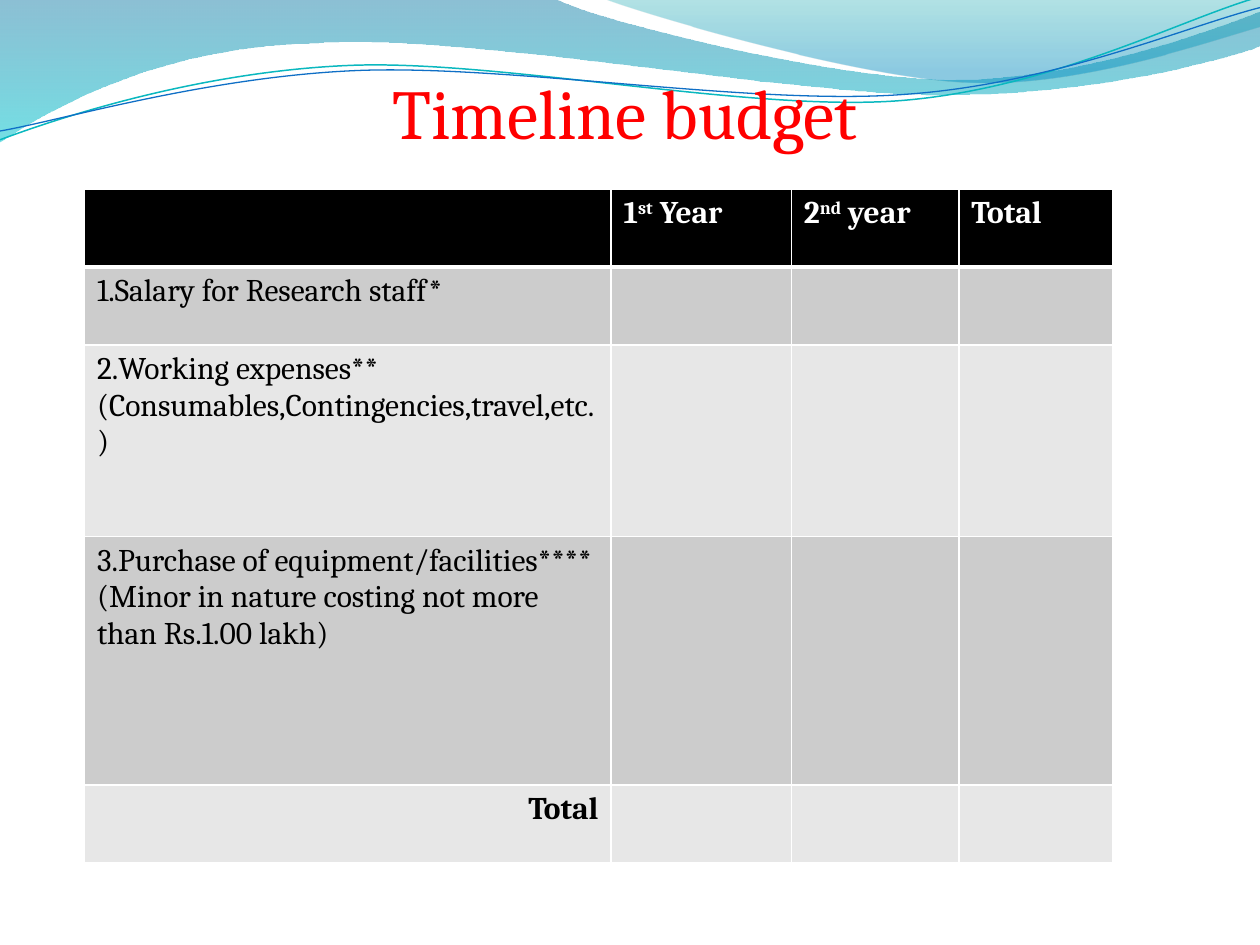
from math import cos, radians, sin

from lxml import etree
from pptx import Presentation
from pptx.dml.color import RGBColor
from pptx.enum.text import MSO_ANCHOR, MSO_AUTO_SIZE, PP_ALIGN
from pptx.oxml import parse_xml
from pptx.oxml.ns import nsdecls, qn
from pptx.util import Inches, Pt

TOP, CENTER, RIGHT = MSO_ANCHOR.TOP, PP_ALIGN.CENTER, PP_ALIGN.RIGHT
FIXED = MSO_AUTO_SIZE.NONE
FONT = "Cambria"
RED = RGBColor(0xFF, 0, 0)
BLACK = RGBColor(0, 0, 0)
WHITE = RGBColor(0xFF, 0xFF, 0xFF)
DARK = RGBColor(0xCC, 0xCC, 0xCC)
PALE = RGBColor(0xE7, 0xE7, 0xE7)
TEAL = RGBColor(0x0A, 0xB8, 0xBF)
BLUE = RGBColor(0x0F, 0x6F, 0xC6)
DEEP = RGBColor(0, 0x74, 0xA1)
AQUA = RGBColor(0, 0xC6, 0xCF)
SEA = RGBColor(0, 0xA1, 0xA9)
SKY = RGBColor(0, 0x8B, 0xBF)

TILT = 357.3
COLS = [4.18, 1.43, 1.33, 1.22]
ROWS = [0.62, 0.62, 1.52, 1.97, 0.62]
HEADS = [[], [("1", "st", " Year")], [("2", "nd", " year")], [("Total",)]]
ITEMS = [
    ["1.Salary for Research staff*"],
    ["2.Working expenses** (Consumables,Contingencies,travel,etc.)"],
    ["3.Purchase of equipment/facilities****",
     "(Minor in nature costing not more than Rs.1.00 lakh)"],
    ["Total"],
]
WAVES = [
    ((-0.01, -0.01, 10.02, 1.14),
     [(0, 0), (4.4, -0.01), (4.76, 0.17, 6.64, 0.63, 7.58, 0.63),
      (8.53, 0.63, 9.58, 0.26, 10, 0.09), (10.01, 0.36),
      (9.83, 0.44, 8.7, 0.76, 7.46, 0.75),
      (6.22, 0.75, 3.82, 0.28, 2.57, 0.34),
      (1.29, 0.36, 0.46, 0.83, -0.01, 1.13), (0, 0)],
     [(0, DEEP, 45), (100, AQUA, 55)]),
    ((4.79, -0.01, 5.21, 0.7),
     [(4.79, -0.01), (5.09, 0.11, 6.82, 0.62, 7.69, 0.65),
      (8.56, 0.69, 9.61, 0.32, 10, 0.21), (10, 0), (4.79, -0.01)],
     [(0, SEA, 30), (80, SKY, 45)]),
]
LINES = [
    ((-0.02, 0.22, 10.02, 0.71),
     [(0, 1.11), (0.48, 0.93, 1.58, 0.57, 2.77, 0.52),
      (3.95, 0.47, 5.93, 0.89, 7.13, 0.8),
      (8.33, 0.71, 9.38, 0.15, 9.98, -0.02)], TEAL, 0.85),
    ((-0.02, 0.3, 10.03, 0.58),
     [(0, 1.04), (0.47, 0.96, 1.64, 0.61, 2.83, 0.56),
      (4.03, 0.51, 5.97, 0.84, 7.17, 0.75),
      (8.36, 0.67, 9.41, 0.21, 10, 0.06)], BLUE, 0.75),
]


def place(x, y, box, turn):
    """Map a slide point into an unturned box."""
    left, top, wide, high = box
    dx, dy = x - left - wide / 2, y - top - high / 2
    c, s = cos(radians(turn)), sin(radians(turn))
    return (Inches(dx * c + dy * s + wide / 2),
            Inches(dy * c - dx * s + high / 2))


def draw(shapes, box, path, close, turn=0):
    """Build one outline of corners and cubic curves."""
    parts = [[place(*part[i:i + 2], box, turn) for i in range(0, len(part), 2)]
             for part in path]
    pen = shapes.build_freeform(*parts[0][0])
    pen.add_line_segments([part[-1] for part in parts[1:]], close=close)
    shape = pen.convert_to_shape()
    shape.left, shape.top, shape.width, shape.height = map(Inches, box)
    shape.rotation = turn
    shape.shadow.inherit = False
    track = shape._element.spPr.find(".//" + qn("a:path"))
    track.set("w", str(shape.width))
    track.set("h", str(shape.height))
    for step, part in zip(list(track), parts):
        for point in list(step):
            step.remove(point)
        if len(part) == 3:
            step.tag = qn("a:cubicBezTo")
        for x, y in part:
            etree.SubElement(step, qn("a:pt"), x=str(x), y=str(y))
    return shape


def add_wave(shapes, box, path, stops):
    """Add a wave with a see-through downward gradient."""
    shape = draw(shapes, box, path, True)
    shape.line.fill.background()
    shape.fill.gradient()
    grad = shape._element.spPr.find(qn("a:gradFill"))
    marks = "".join(
        f'<a:gs pos="{pos * 1000}"><a:srgbClr val="{color}">'
        f'<a:alpha val="{alpha * 1000}"/></a:srgbClr></a:gs>'
        for pos, color, alpha in stops)
    grad.getparent().replace(grad, parse_xml(
        f'<a:gradFill {nsdecls("a")} rotWithShape="1"><a:gsLst>{marks}</a:gsLst>'
        '<a:lin ang="5400000" scaled="0"/></a:gradFill>'))


def add_line(shapes, box, path, color, width):
    """Add an open curve in a tilted box."""
    shape = draw(shapes, box, path, False, TILT)
    shape.fill.background()
    shape.line.color.rgb = color
    shape.line.width = Pt(width)


def set_title(slide, text):
    """Place the title in front of the waves."""
    title = slide.shapes.title
    title.left, title.top = Inches(0.5), Inches(0.5)
    title.width, title.height = Inches(8.92), Inches(0.77)
    frame = title.text_frame
    frame.text = text
    frame.auto_size = FIXED
    frame.vertical_anchor = TOP
    para = frame.paragraphs[0]
    para.alignment = CENTER
    para.font.name, para.font.size = FONT, Pt(40)
    para.font.color.rgb = RED
    slide.shapes._spTree.append(title._element)


def set_edges(cell, top, bottom):
    """Draw white borders round a cell."""
    props = cell._tc.get_or_add_tcPr()
    for side, width in zip("LRTB", (1, 1, top, bottom)):
        edge = etree.SubElement(props, qn(f"a:ln{side}"), w=str(Pt(width)))
        fill = etree.SubElement(edge, qn("a:solidFill"))
        etree.SubElement(fill, qn("a:srgbClr"), val=str(WHITE))


def fill_cell(cell, paras, back, color, bold):
    """Write the paragraphs of a cell; a middle run is raised."""
    cell.fill.solid()
    cell.fill.fore_color.rgb = back
    frame = cell.text_frame
    for i, runs in enumerate(paras):
        para = frame.add_paragraph() if i else frame.paragraphs[0]
        para.font.name, para.font.size = FONT, Pt(18)
        para.font.bold = bold
        para.font.color.rgb = color
        for n, text in enumerate(runs):
            run = para.add_run()
            run.text = text
            if n == 1:
                run._r.get_or_add_rPr().set("baseline", "30000")


def add_budget(slide):
    """Add the budget table."""
    rows = [HEADS] + [[[(text,) for text in item], [], [], []] for item in ITEMS]
    table = slide.shapes.add_table(
        len(ROWS), len(COLS), Inches(0.67), Inches(1.5),
        Inches(sum(COLS)), Inches(sum(ROWS))).table
    for col, width in zip(table.columns, COLS):
        col.width = Inches(width)
    last = len(rows) - 1
    for r, row in enumerate(rows):
        table.rows[r].height = Inches(ROWS[r])
        back = BLACK if r == 0 else DARK if r % 2 else PALE
        for c, paras in enumerate(row):
            cell = table.cell(r, c)
            set_edges(cell, 3 if r == 1 else 1, 3 if r == 0 else 1)
            fill_cell(cell, paras, back, BLACK if r else WHITE, r in (0, last))
    table.cell(last, 0).text_frame.paragraphs[0].alignment = RIGHT


def main():
    """Build and save the slide."""
    deck = Presentation()
    deck.slide_width, deck.slide_height = Inches(10), Inches(7.5)
    slide = deck.slides.add_slide(deck.slide_layouts[5])
    for wave in WAVES:
        add_wave(slide.shapes, *wave)
    group = slide.shapes.add_group_shape()
    for line in LINES:
        add_line(group.shapes, *line)
    set_title(slide, "Timeline budget")
    add_budget(slide)
    deck.save("out.pptx")


if __name__ == "__main__":
    main()
